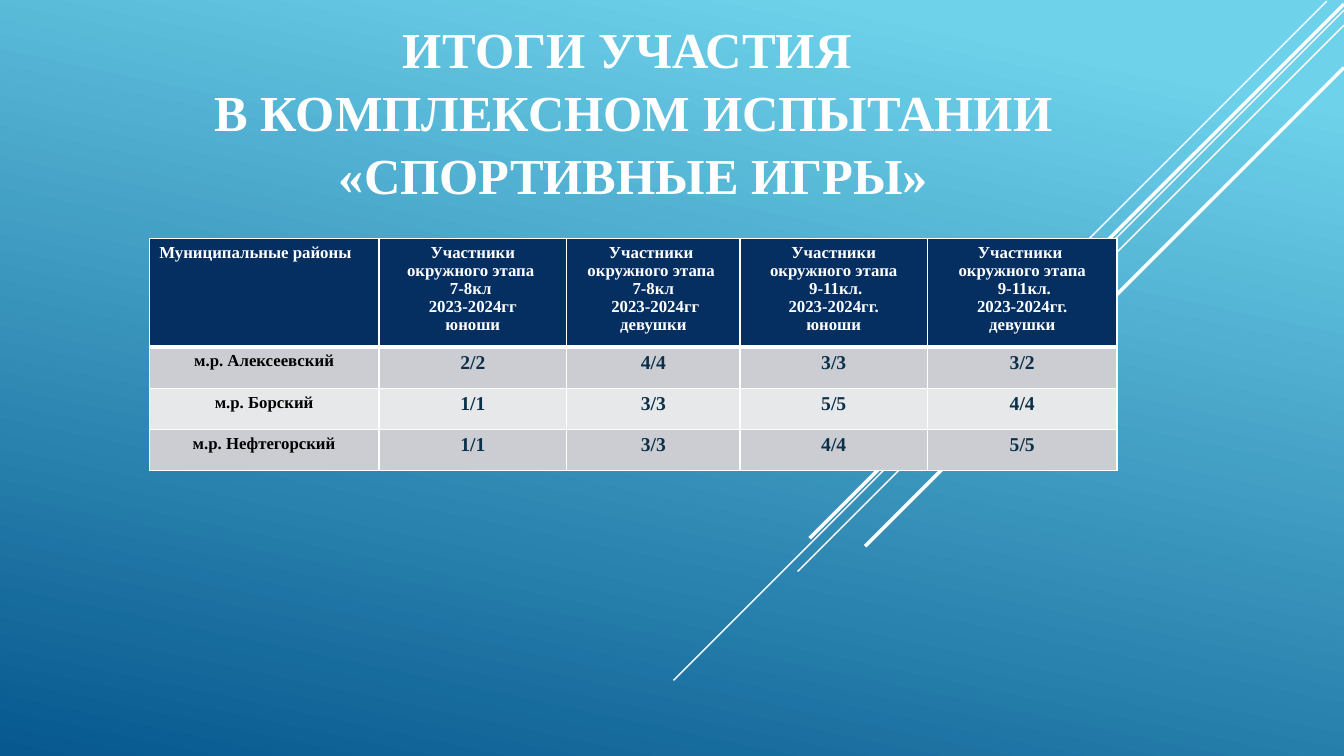
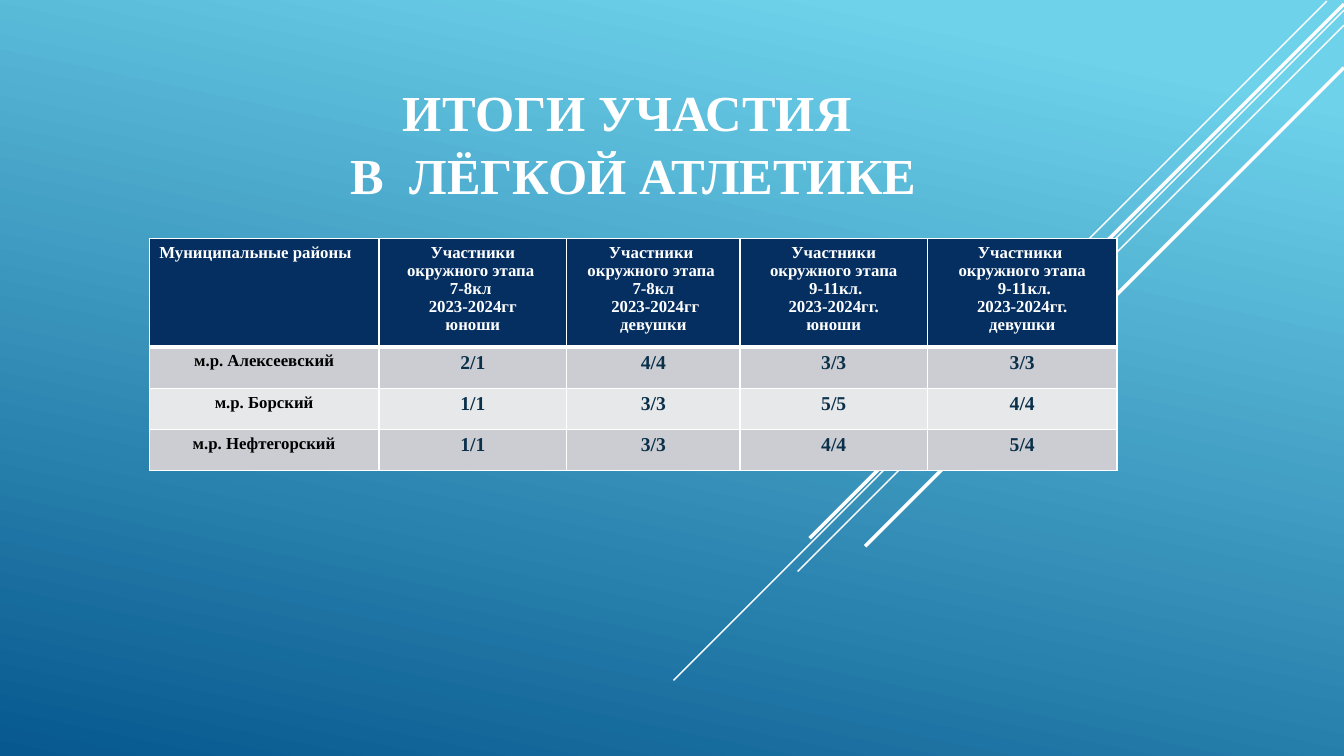
from dataclasses import dataclass

from lxml import etree
from pptx import Presentation
from pptx.dml.color import RGBColor
from pptx.enum.shapes import MSO_CONNECTOR
from pptx.enum.text import MSO_ANCHOR, PP_ALIGN
from pptx.oxml.ns import qn
from pptx.util import Inches, Pt

STRAIGHT = MSO_CONNECTOR.STRAIGHT
LEFT, CENTER = PP_ALIGN.LEFT, PP_ALIGN.CENTER
BOTTOM = MSO_ANCHOR.BOTTOM


@dataclass(frozen=True)
class Theme:
    font: str = "Times New Roman"
    title_size: float = 36
    label_size: float = 12
    score_size: float = 14
    title_spacing: float = 1.04
    header_spacing: float = 0.97
    thin: float = 1
    thick: float = 2.5
    header_rule: float = 3
    white: str = "FFFFFF"
    black: str = "000000"
    score: str = "0A304A"
    header: str = "052F61"
    bands: tuple = ("CCCDD2", "E7E8EA")
    gradient: tuple = ((0.1, "6ED2EB"), (1, "06588E"))
    gradient_angle: float = 258


THEME = Theme()

SLIDE_SIZE = (13.33, 7.5)
TITLE_BOX = (0.86, 0.75, 10.85, 1.33)
TABLE_ORIGIN = (1.48, 2.37)
COLUMN_WIDTHS = (2.28, 1.86, 1.72, 1.86, 1.88)
HEADER_HEIGHT, ROW_HEIGHT = 1.02, 0.41

# Diagonal rays at 45 degrees: right end, drop to the lower left, weight
RAYS = [
    (13.16, 0.01, 4.17, THEME.thin),
    (13.33, 0.10, 6.65, THEME.thin),
    (13.33, 0.25, 5.42, THEME.thin),
    (13.33, 0.04, 5.30, THEME.thick),
    (13.33, 0.67, 4.75, THEME.thick),
]

HEADERS = [
    ["Муниципальные районы"],
    ["Участники окружного этапа ", "7-8кл ", "2023-2024гг", "юноши"],
    ["Участники ", "окружного этапа ", "7-8кл", " 2023-2024гг", "девушки"],
    ["Участники окружного этапа", " 9-11кл.", "2023-2024гг.", "юноши"],
    ["Участники ", "окружного этапа", " 9-11кл.", "2023-2024гг.", "девушки"],
]
DISTRICTS = ["м.р. Алексеевский", "м.р. Борский", "м.р. Нефтегорский"]

SLIDES = [
    {
        "title": ["ИТОГИ УЧАСТИЯ ", "В КОМПЛЕКСНОМ ИСПЫТАНИИ «СПОРТИВНЫЕ ИГРЫ»"],
        "scores": [
            ["2/2", "4/4", "3/3", "3/2"],
            ["1/1", "3/3", "5/5", "4/4"],
            ["1/1", "3/3", "4/4", "5/5"],
        ],
    },
    {
        "title": ["ИТОГИ УЧАСТИЯ ", "В  ЛЁГКОЙ АТЛЕТИКЕ"],
        "scores": [
            ["2/1", "4/4", "3/3", "3/3"],
            ["1/1", "3/3", "5/5", "4/4"],
            ["1/1", "3/3", "4/4", "5/4"],
        ],
    },
]


def color(value):
    return RGBColor.from_string(value)


def add_run(paragraph, text, size, text_color):
    run = paragraph.add_run()
    run.text = text
    run.font.name = THEME.font
    run.font.size = Pt(size)
    run.font.bold = True
    run.font.color.rgb = color(text_color)


def paint_background(master):
    fill = master.background.fill
    fill.gradient()
    fill.gradient_angle = THEME.gradient_angle
    for stop, (position, value) in zip(fill.gradient_stops, THEME.gradient):
        stop.position = position
        stop.color.rgb = color(value)


def add_rays(slide):
    for x, y, drop, weight in RAYS:
        ends = [Inches(value) for value in (x, y, x - drop, y + drop)]
        ray = slide.shapes.add_connector(STRAIGHT, *ends)
        ray.line.color.rgb = color(THEME.white)
        ray.line.width = Pt(weight)
        etree.SubElement(ray._element.spPr, qn("a:effectLst"))


def add_title(slide, lines):
    box = slide.shapes.add_textbox(*[Inches(value) for value in TITLE_BOX])
    frame = box.text_frame
    frame.word_wrap = True
    frame.vertical_anchor = BOTTOM
    paragraph = frame.paragraphs[0]
    paragraph.alignment = CENTER
    paragraph.line_spacing = THEME.title_spacing
    for index, line in enumerate(lines):
        if index:
            paragraph.add_line_break()
        add_run(paragraph, line, THEME.title_size, THEME.white)


def set_borders(cell, top, bottom):
    """Draw white borders; they must come before the fill in the cell."""
    properties = cell._tc.get_or_add_tcPr()
    widths = {"L": THEME.thin, "R": THEME.thin, "T": top, "B": bottom}
    for index, (side, width) in enumerate(widths.items()):
        line = etree.Element(qn(f"a:ln{side}"), w=str(Pt(width)))
        fill = etree.SubElement(line, qn("a:solidFill"))
        etree.SubElement(fill, qn("a:srgbClr"), val=THEME.white)
        properties.insert(index, line)


def fill_cell(cell, lines, row, column):
    is_header = row == 0
    if is_header:
        size, text_color, background = THEME.label_size, THEME.white, THEME.header
    else:
        background = THEME.bands[(row - 1) % len(THEME.bands)]
        size, text_color = (
            (THEME.score_size, THEME.score) if column
            else (THEME.label_size, THEME.black)
        )
    cell.fill.solid()
    cell.fill.fore_color.rgb = color(background)
    set_borders(
        cell,
        top=THEME.header_rule if row == 1 else THEME.thin,
        bottom=THEME.header_rule if is_header else THEME.thin,
    )
    frame = cell.text_frame
    for index, line in enumerate(lines):
        paragraph = frame.add_paragraph() if index else frame.paragraphs[0]
        paragraph.alignment = LEFT if is_header and column == 0 else CENTER
        if is_header:
            paragraph.line_spacing = THEME.header_spacing
        add_run(paragraph, line, size, text_color)


def add_results(slide, scores):
    rows = [HEADERS] + [
        [[text] for text in [district, *values]]
        for district, values in zip(DISTRICTS, scores)
    ]
    heights = [HEADER_HEIGHT] + [ROW_HEIGHT] * len(DISTRICTS)
    size = (sum(COLUMN_WIDTHS), sum(heights))
    table = slide.shapes.add_table(
        len(rows), len(COLUMN_WIDTHS),
        *[Inches(value) for value in TABLE_ORIGIN + size],
    ).table
    for column, width in zip(table.columns, COLUMN_WIDTHS):
        column.width = Inches(width)
    for row, height in zip(table.rows, heights):
        row.height = Inches(height)
    for row, cells in enumerate(rows):
        for column, lines in enumerate(cells):
            fill_cell(table.cell(row, column), lines, row, column)


def main():
    presentation = Presentation()
    presentation.slide_width, presentation.slide_height = map(Inches, SLIDE_SIZE)
    paint_background(presentation.slide_master)
    blank = presentation.slide_layouts[6]
    for content in SLIDES:
        slide = presentation.slides.add_slide(blank)
        add_rays(slide)
        add_title(slide, content["title"])
        add_results(slide, content["scores"])
    presentation.save("out.pptx")


if __name__ == "__main__":
    main()
